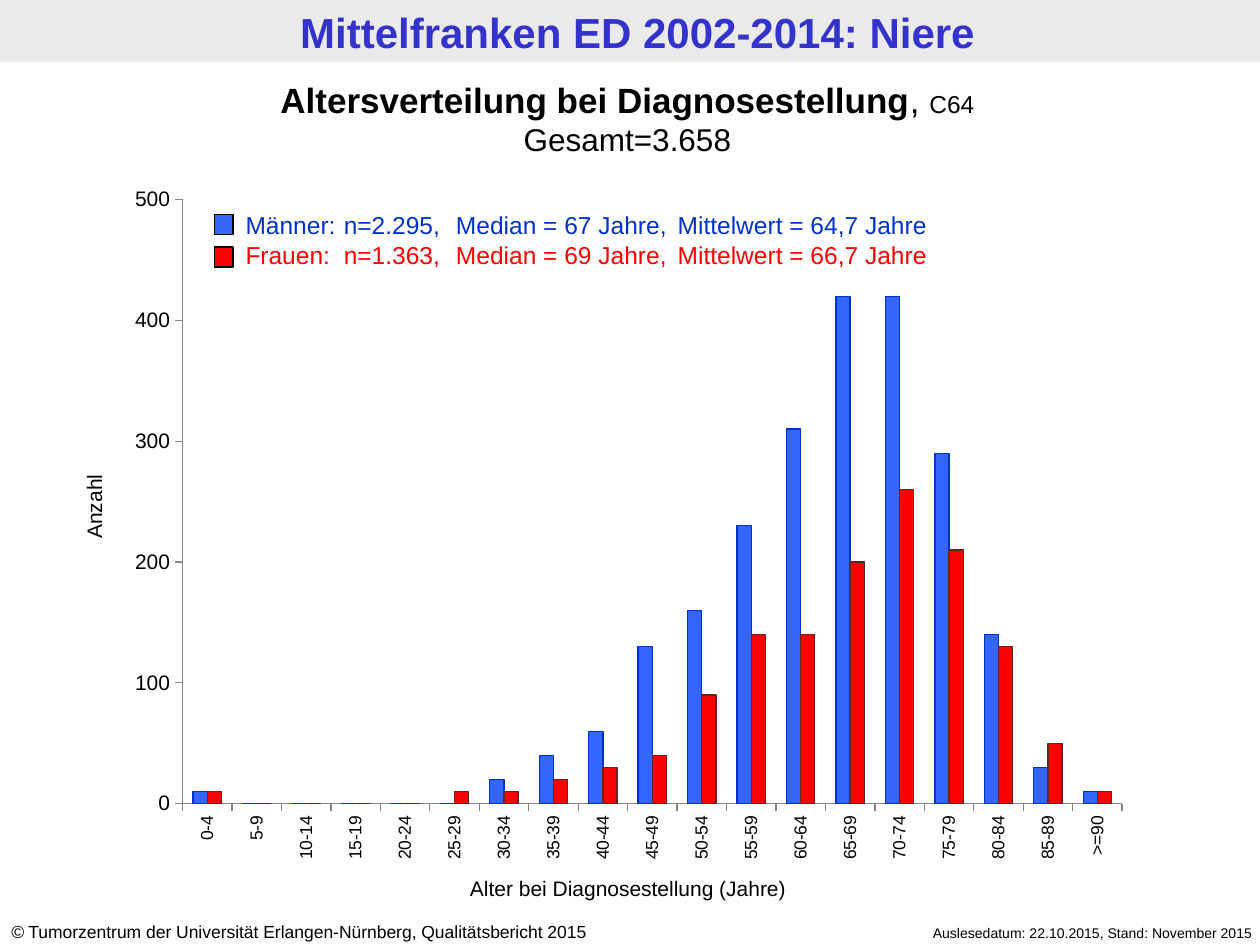
from lxml import etree
from pptx import Presentation
from pptx import util as u
from pptx.chart import data as cd
from pptx.dml import color as dc
from pptx.enum import chart as ec, shapes, text
from pptx.oxml import ns

AGES = [f"{n}-{n + 4}" for n in range(0, 90, 5)] + [">=90"]
MEN = [10, 0, 0, 0, 0, 0, 20, 40, 60, 130, 160, 230, 310, 420, 420, 290, 140, 30, 10]
WOMEN = [10, 0, 0, 0, 0, 10, 10, 20, 30, 40, 90, 140, 140, 200, 260, 210, 130, 50, 10]
BLUE, RED, NAVY, BROWN = "3366FF", "FF0000", "0033CC", "632523"
ALIGN = {"l": text.PP_ALIGN.LEFT, "c": text.PP_ALIGN.CENTER, "r": text.PP_ALIGN.RIGHT}


def rgb(code):
    """Turn a hex string into a colour."""
    return dc.RGBColor.from_string(code)


def paint(part, fill, line=None):
    """Set fill and outline of a shape or a series format."""
    part.fill.solid()
    part.fill.fore_color.rgb = rgb(fill)
    if line:
        part.line.color.rgb = rgb(line)
        part.line.width = u.Pt(0.75)
    else:
        part.line.fill.background()


def style(font, size, color="000000", bold=False, italic=False):
    """Set the look of a font."""
    font.name, font.size = "Arial", u.Pt(size)
    font.bold, font.italic = bold, italic
    font.color.rgb = rgb(color)


def add_text(slide, box, paras, align="l", tabs=(), turn=0, low=False):
    """Add a text box of paragraphs, each a list of (words, format) runs."""
    shape = slide.shapes.add_textbox(*map(u.Inches, box))
    shape.rotation = turn
    frame = shape.text_frame
    frame.word_wrap = True
    if low:
        frame.vertical_anchor = text.MSO_ANCHOR.BOTTOM
    for num, runs in enumerate(paras):
        para = frame.add_paragraph() if num else frame.paragraphs[0]
        para.alignment = ALIGN[align]
        if tabs:
            stops = etree.SubElement(para._p.get_or_add_pPr(), ns.qn("a:tabLst"))
            for pos in tabs:
                etree.SubElement(stops, ns.qn("a:tab"), pos=str(u.Inches(pos)), algn="l")
        for words, form in runs:
            run = para.add_run()
            run.text = words
            style(run.font, **form)


def add_rect(slide, box, fill, line=None):
    """Add a plain rectangle."""
    shape = slide.shapes.add_shape(shapes.MSO_SHAPE.RECTANGLE, *map(u.Inches, box))
    shape.shadow.inherit = False
    paint(shape, fill, line)


def set_axis(axis, size):
    """Give an axis its line, ticks and labels."""
    axis.has_major_gridlines = False
    axis.major_tick_mark = ec.XL_TICK_MARK.OUTSIDE
    axis.minor_tick_mark = ec.XL_TICK_MARK.NONE
    axis.format.line.color.rgb = rgb("868686")
    axis.format.line.width = u.Pt(0.75)
    style(axis.tick_labels.font, size)


def set_plot(chart, **place):
    """Place the inner plot area by shares of the chart frame."""
    area = chart._chartSpace.chart.plotArea
    for old in area.findall(ns.qn("c:layout")):
        area.remove(old)
    layout = etree.Element(ns.qn("c:layout"))
    area.insert(0, layout)
    manual = etree.SubElement(layout, ns.qn("c:manualLayout"))
    rules = {"layoutTarget": "inner", "xMode": "edge", "yMode": "edge", **place}
    for name, val in rules.items():
        etree.SubElement(manual, ns.qn("c:" + name), val=str(val))


def add_bars(slide, box):
    """Add the column chart of cases by age and sex."""
    data = cd.CategoryChartData()
    data.categories = AGES
    data.add_series("Männer", MEN)
    data.add_series("Frauen", WOMEN)
    kind = ec.XL_CHART_TYPE.COLUMN_CLUSTERED
    chart = slide.shapes.add_chart(kind, *map(u.Inches, box), data).chart
    chart.has_legend = chart.has_title = False
    style(chart.font, 12)
    plot = chart.plots[0]
    plot.gap_width, plot.overlap, plot.vary_by_categories = 150, 0, False
    for series, fill, line in zip(plot.series, (BLUE, RED), (NAVY, BROWN)):
        paint(series.format, fill, line)
        series.invert_if_negative = False
    set_axis(chart.category_axis, 10)
    set_axis(chart.value_axis, 12)
    labels = chart.category_axis._element.find(ns.qn("c:txPr"))
    labels.find(ns.qn("a:bodyPr")).set("rot", "-5400000")
    scale = chart.value_axis
    scale.minimum_scale, scale.maximum_scale, scale.major_unit = 0, 500, 100
    set_plot(chart, x=0.066, y=0.035, w=0.914, h=0.864)


def main():
    """Build the slide and save it."""
    deck = Presentation()
    deck.slide_width, deck.slide_height = u.Inches(10), u.Inches(7.5)
    slide = deck.slides.add_slide(deck.slide_layouts[6])
    add_rect(slide, (0, 0, 10, 0.49), "EAEAEA")
    head = {"size": 24, "color": "3333CC", "bold": True}
    add_text(slide, (0.06, 0.01, 10, 0.49),
             [[("Mittelfranken ED 2002-2014: Niere", head)]], "c", low=True)
    add_text(slide, (6.65, 7.29, 3.39, 0.24),
             [[("Auslesedatum: 22.10.2015, Stand: November 2015", {"size": 8})]], "r")
    owner = " Tumorzentrum der Universität Erlangen-Nürnberg, Qualitätsbericht 2015"
    add_text(slide, (-0.01, 7.26, 5.24, 0.27),
             [[("©", {"size": 10, "italic": True}), (owner, {"size": 10})]])
    add_bars(slide, (0.91, 1.39, 8.16, 5.55))
    add_text(slide, (-0.04, 0.57, 10.04, 0.74), [
        [("Altersverteilung bei Diagnosestellung", {"size": 20, "bold": True}),
         (", ", {"size": 20}), ("C64", {"size": 14})],
        [("Gesamt=3.658", {"size": 18})]], "c")
    add_text(slide, (1.85, 1.62, 6.85, 0.57), [
        [("Männer: \tn=2.295, \tMedian = 67 Jahre, \tMittelwert = 64,7 Jahre",
          {"size": 14, "color": NAVY})],
        [("Frauen: \tn=1.363, \tMedian = 69 Jahre,\tMittelwert = 66,7 Jahre",
          {"size": 14, "color": RED})]], tabs=(0.78, 0.88, 1.67, 3.43))
    for top, fill in ((1.7, BLUE), (1.96, RED)):
        add_rect(slide, (1.7, top, 0.15, 0.16), fill, "000000")
    name = {"size": 12}
    add_text(slide, (3.45, 6.9, 3.07, 0.3),
             [[("Alter bei Diagnosestellung (Jahre)", name)]], "c")
    add_text(slide, (-0.56, 3.87, 2.61, 0.3), [[("Anzahl", name)]], "c", turn=270)
    deck.save("out.pptx")


if __name__ == "__main__":
    main()
